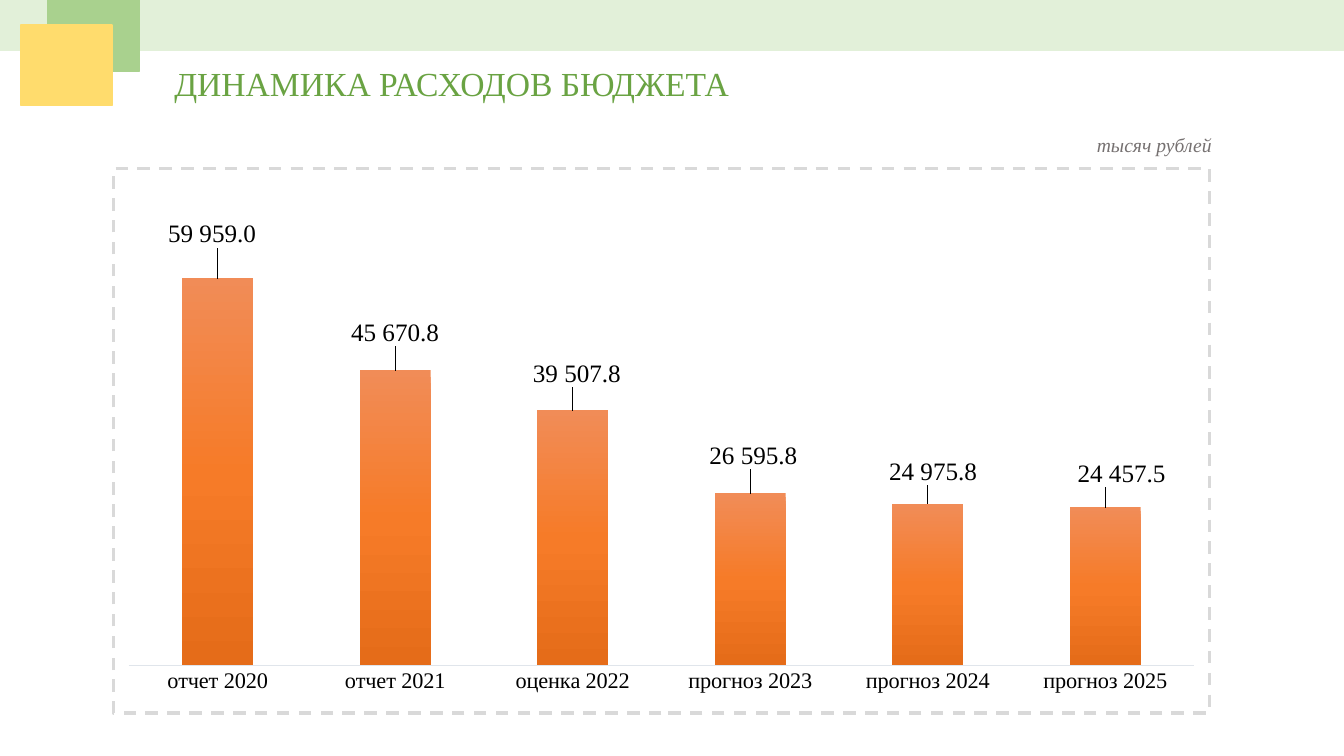
from pptx import Presentation
from pptx.chart.data import CategoryChartData
from pptx.dml.color import RGBColor
from pptx.enum.chart import XL_CHART_TYPE, XL_LABEL_POSITION, XL_TICK_MARK
from pptx.enum.shapes import MSO_SHAPE
from pptx.enum.text import MSO_AUTO_SIZE
from pptx.oxml import parse_xml
from pptx.oxml.ns import nsdecls, qn
from pptx.util import Inches, Pt

SERIF = "Times New Roman"
NUMBER = r"#\ ##0.0"
YEARS = ["отчет 2020", "отчет 2021", "оценка 2022",
         "прогноз 2023", "прогноз 2024", "прогноз 2025"]
COSTS = [59959.0, 45670.8, 39507.8, 26595.8, 24975.8, 24457.5]
# Label shifts from the bar end, in percent of the chart size
SHIFTS = [(-0.5, -4.8), (0, -3.7), (0.4, -3.5),
          (0.3, -3.7), (0.5, -2.7), (1.5, -2.9)]
STOPS = [(0, "F18C57"), (50, "F67B28"), (100, "E56C19")]


def color(code):
    return RGBColor.from_string(code)


def xml(tag, body):
    return parse_xml(f"<{tag} {nsdecls('a', 'c')}>{body}</{tag}>")


def layout(**parts):
    body = "".join(f'<c:{name} val="{val}"/>' for name, val in parts.items())
    return xml("c:layout", f"<c:manualLayout>{body}</c:manualLayout>")


class Board:
    def __init__(self, slide, face):
        self.slide = slide
        self.face = face

    def style(self, font, size, code="000000", italic=False):
        font.name = self.face
        font.size = Pt(size)
        font.color.rgb = color(code)
        font.italic = italic

    def block(self, box, code):
        shape = self.slide.shapes.add_shape(MSO_SHAPE.RECTANGLE, *map(Inches, box))
        shape.shadow.inherit = False
        shape.fill.solid()
        shape.fill.fore_color.rgb = color(code)
        shape.line.color.rgb = color(code)
        shape.line.width = Pt(1)

    def text(self, box, words, size, code, italic=False):
        frame = self.slide.shapes.add_textbox(*map(Inches, box)).text_frame
        frame.word_wrap = False
        frame.auto_size = MSO_AUTO_SIZE.SHAPE_TO_FIT_TEXT
        run = frame.paragraphs[0].add_run()
        run.text = words
        self.style(run.font, size, code, italic)

    def columns(self, box, cats, vals):
        data = CategoryChartData(number_format=NUMBER)
        data.categories = cats
        data.add_series("Series 1", vals)
        chart = self.slide.shapes.add_chart(
            XL_CHART_TYPE.COLUMN_CLUSTERED, *map(Inches, box), data).chart
        chart.has_title = False
        chart.has_legend = False
        chart.font.name = "Calibri"
        chart.font.size = Pt(10)
        chart.font.color.rgb = color("000000")
        self.axes(chart)
        self.frame(chart)
        plot = chart.plots[0]
        plot.gap_width = 150
        plot.vary_by_categories = False
        self.shade(plot.series[0])
        self.labels(plot.series[0])

    def axes(self, chart):
        axis = chart.category_axis
        axis.major_tick_mark = axis.minor_tick_mark = XL_TICK_MARK.NONE
        axis.format.line.color.rgb = color("E0E5EB")
        axis.format.line.width = Pt(0.75)
        self.style(axis.tick_labels.font, 16)
        scale = chart.value_axis
        scale.minimum_scale = 0
        scale.maximum_scale = 70000
        scale.has_major_gridlines = False
        scale.visible = False

    def frame(self, chart):
        # Dashed border and fixed plot area
        root = chart._chartSpace.find(qn("c:chart"))
        root.addnext(xml("c:spPr", (
            f'<a:noFill/><a:ln w="{Pt(2.25)}"><a:solidFill><a:srgbClr val="D9D9D9"/>'
            '</a:solidFill><a:prstDash val="dash"/></a:ln>')))
        area = root.find(qn("c:plotArea"))
        for old in area.findall(qn("c:layout")):
            area.remove(old)
        area.insert(0, layout(layoutTarget="inner", xMode="edge", yMode="edge",
                              x=0.014, y=0.082, w=0.972, h=0.83))

    def shade(self, series):
        series.format.fill.solid()
        solid = series._element.find(qn("c:spPr")).find(qn("a:solidFill"))
        stops = "".join(f'<a:gs pos="{pos * 1000}"><a:srgbClr val="{code}"/></a:gs>'
                        for pos, code in STOPS)
        solid.getparent().replace(solid, xml(
            "a:gradFill", f'<a:gsLst>{stops}</a:gsLst><a:lin ang="5400000" scaled="0"/>'))

    def labels(self, series):
        marks = series.data_labels
        marks.show_value = True
        marks.number_format = NUMBER
        marks.number_format_is_linked = False
        marks.position = XL_LABEL_POSITION.OUTSIDE_END
        self.style(marks.font, 18)
        for i in range(len(SHIFTS)):
            label = series.points[i].data_label
            self.style(label.font, 18)
            label.position = XL_LABEL_POSITION.OUTSIDE_END
        # Shift each label from its default place
        for item, (x, y) in zip(series._element.iter(qn("c:dLbl")), SHIFTS):
            form = xml("c:numFmt", "")
            form.set("formatCode", NUMBER)
            form.set("sourceLinked", "0")
            item.insert(1, layout(x=x / 100, y=y / 100))
            item.insert(2, form)


def main():
    deck = Presentation()
    deck.slide_width = Inches(13.33)
    deck.slide_height = Inches(7.5)
    board = Board(deck.slides.add_slide(deck.slide_layouts[6]), SERIF)

    # Heading and corner blocks
    board.text((1.63, 0.58, 5.85, 0.5), "ДИНАМИКА РАСХОДОВ БЮДЖЕТА", 24, "6AA343")
    board.block((0, 0, 13.33, 0.5), "E2F0D9")
    board.block((0.47, 0, 0.91, 0.71), "A9D18E")
    board.block((0.21, 0.25, 0.9, 0.8), "FFDC6D")

    # Spending chart and its unit
    board.columns((1.11, 1.66, 10.9, 5.43), YEARS, COSTS)
    board.text((10.78, 1.27, 1.39, 0.34), "тысяч рублей", 14, "767171", italic=True)

    deck.save("out.pptx")


if __name__ == "__main__":
    main()
